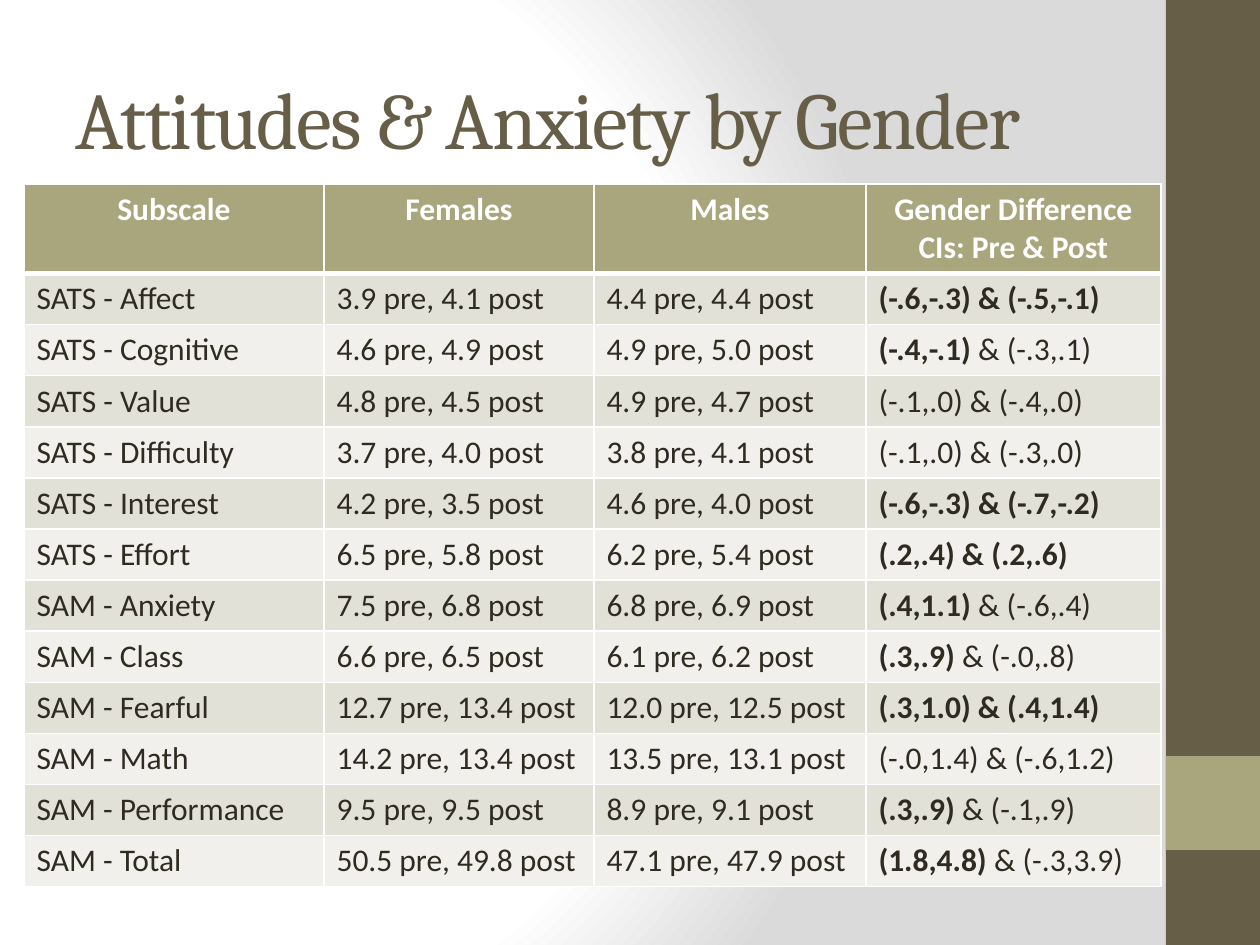
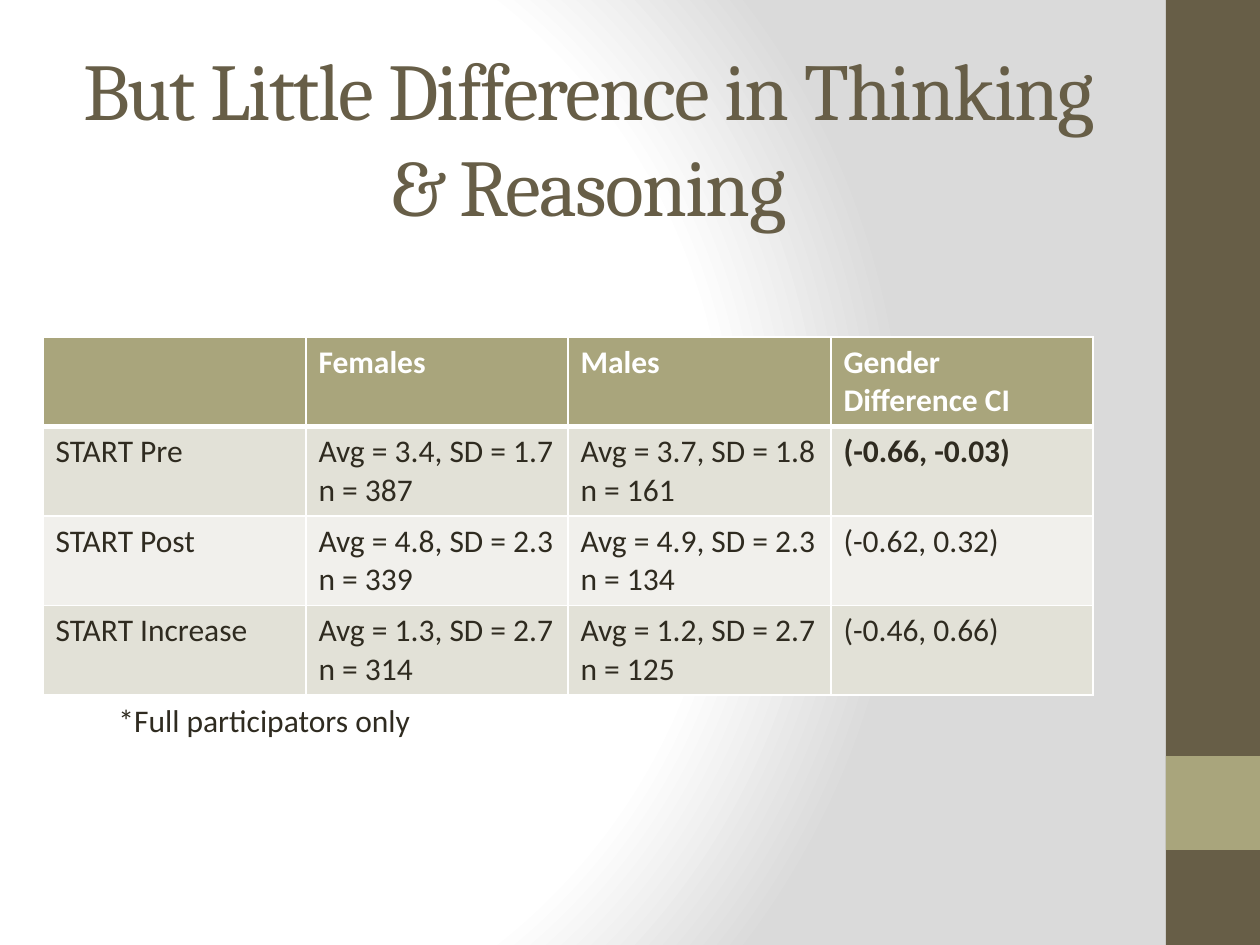
from dataclasses import dataclass

from lxml import etree
from pptx import Presentation
from pptx.dml.color import RGBColor as RGB
from pptx.enum.shapes import MSO_SHAPE
from pptx.enum.text import MSO_ANCHOR, MSO_AUTO_SIZE, PP_ALIGN
from pptx.oxml import parse_xml
from pptx.oxml.ns import nsdecls, qn
from pptx.util import Emu, Pt


@dataclass(frozen=True)
class Theme:
    brown: str = "675E47"
    olive: str = "A9A57C"
    ink: str = "2F2B20"
    white: str = "FFFFFF"
    grey: str = "DADADA"
    row_fills: tuple = ("E2E1D7", "F1F0EC")
    title_font: str = "Cambria"
    body_font: str = "Calibri"
    title_size: int = 46
    body_size: int = 18


T = Theme()
LEFT, CENTER = PP_ALIGN.LEFT, PP_ALIGN.CENTER


def px(*lengths):
    """Turn px (126 to the inch) into a list of EMU lengths."""
    return [Emu(round(n * 914400 / 126)) for n in lengths]


def set_font(font, name, size, color):
    font.name, font.size = name, Pt(size)
    font.color.rgb = RGB.from_string(color)


# Text between asterisks is bold; a line break starts a new paragraph.
SLIDES = [
    dict(
        title="Attitudes & Anxiety by Gender",
        title_box=(63, 38, 1050, 158), title_align=LEFT,
        table_at=(24, 184), columns=(300, 270, 272, 295),
        header_height=88, row_height=51, header_align=CENTER,
        rows=[
            ("Subscale", "Females", "Males", "Gender Difference\nCIs: Pre & Post"),
            ("SATS - Affect", "3.9 pre, 4.1 post", "4.4 pre, 4.4 post", "*(-.6,-.3) & (-.5,-.1)*"),
            ("SATS - Cognitive", "4.6 pre, 4.9 post", "4.9 pre, 5.0 post", "*(-.4,-.1) *& (-.3,.1)"),
            ("SATS - Value", "4.8 pre, 4.5 post", "4.9 pre, 4.7 post", "(-.1,.0) & (-.4,.0)"),
            ("SATS - Difficulty", "3.7 pre, 4.0 post", "3.8 pre, 4.1 post", "(-.1,.0) & (-.3,.0)"),
            ("SATS - Interest", "4.2 pre, 3.5 post", "4.6 pre, 4.0 post", "*(-.6,-.3) & (-.7,-.2)*"),
            ("SATS - Effort", "6.5 pre, 5.8 post", "6.2 pre, 5.4 post", "*(.2,.4) & (.2,.6)*"),
            ("SAM - Anxiety", "7.5 pre, 6.8 post", "6.8 pre, 6.9 post", "*(.4,1.1) *& (-.6,.4)"),
            ("SAM - Class", "6.6 pre, 6.5 post", "6.1 pre, 6.2 post", "*(.3,.9) *& (-.0,.8)"),
            ("SAM - Fearful", "12.7 pre, 13.4 post", "12.0 pre, 12.5 post", "*(.3,1.0) & (.4,1.4)*"),
            ("SAM - Math", "14.2 pre, 13.4 post", "13.5 pre, 13.1 post", "(-.0,1.4) & (-.6,1.2)"),
            ("SAM - Performance", "9.5 pre, 9.5 post", "8.9 pre, 9.1 post", "*(.3,.9) *& (-.1,.9)"),
            ("SAM - Total", "50.5 pre, 49.8 post", "47.1 pre, 47.9 post", "*(1.8,4.8) *& (-.3,3.9)"),
        ],
    ),
    dict(
        title="But Little Difference in Thinking & Reasoning",
        title_box=(63, 38, 1050, 197), title_align=CENTER,
        table_at=(43, 337), columns=(263, 262) * 2,
        header_height=88, row_height=88, header_align=LEFT,
        rows=[
            ("", "Females", "Males", "Gender Difference CI"),
            ("START Pre", "Avg = 3.4, SD = 1.7\nn = 387", "Avg = 3.7, SD = 1.8\nn = 161", "*(-0.66, -0.03)*"),
            ("START Post", "Avg = 4.8, SD = 2.3\nn = 339", "Avg = 4.9, SD = 2.3\nn = 134", "(-0.62, 0.32)"),
            ("START Increase", "Avg = 1.3, SD = 2.7\nn = 314", "Avg = 1.2, SD = 2.7\nn = 125", "(-0.46, 0.66)"),
        ],
        note="*Full participators only", note_box=(106, 695, 321, 50),
    ),
]

prs = Presentation()
prs.slide_width, prs.slide_height = px(1260, 945)
master = prs.slide_master

# Shared background: white that fades to grey on the right
master.background.fill.solid()
bg = master.element.find(".//" + qn("p:bgPr"))
bg.replace(bg[0], parse_xml(
    f'<a:gradFill {nsdecls("a")} rotWithShape="1"><a:gsLst>'
    f'<a:gs pos="0"><a:srgbClr val="{T.white}"/></a:gs>'
    f'<a:gs pos="75000"><a:srgbClr val="{T.white}"/></a:gs>'
    f'<a:gs pos="100000"><a:srgbClr val="{T.grey}"/></a:gs></a:gsLst>'
    '<a:path path="circle"><a:fillToRect l="20000" t="50000" r="100000" b="50000"/>'
    '</a:path></a:gradFill>'))

for number, content in enumerate(SLIDES):
    s = prs.slides.add_slide(prs.slide_layouts[5])

    # Side bands are made once and moved to the master
    if number == 0:
        for i, (top, height, color) in enumerate([(0, 945, T.brown), (756, 94, T.olive)]):
            band = s.shapes.add_shape(MSO_SHAPE.RECTANGLE, *px(1166, top, 94, height))
            band.shadow.inherit = False
            band.fill.solid()
            band.fill.fore_color.rgb = RGB.from_string(color)
            band.line.fill.background()
            band.element.nvSpPr.cNvPr.set("id", str(20 + i))
            master.shapes.element.insert(2 + i, band.element)

    title = s.shapes.title
    title.left, title.top, title.width, title.height = px(*content["title_box"])
    tf = title.text_frame
    tf.text = content["title"]
    tf.word_wrap = True
    tf.auto_size = MSO_AUTO_SIZE.NONE
    tf.vertical_anchor = MSO_ANCHOR.MIDDLE
    p = tf.paragraphs[0]
    p.alignment = content["title_align"]
    set_font(p.font, T.title_font, T.title_size, T.brown)
    p.runs[0].font.bold = False
    p.runs[0].font._element.set("spc", "-100")

    rows, columns = content["rows"], content["columns"]
    heights = [content["header_height"]] + [content["row_height"]] * (len(rows) - 1)
    table = s.shapes.add_table(len(rows), len(columns), *px(
        *content["table_at"], sum(columns), sum(heights))).table
    for column, width in zip(table.columns, px(*columns)):
        column.width = width
    for y, (row, height) in enumerate(zip(rows, px(*heights))):
        table.rows[y].height = height
        is_header = y == 0
        fill = T.olive if is_header else T.row_fills[(y - 1) % 2]
        for x, text in enumerate(row):
            cell = table.cell(y, x)
            cell.fill.solid()
            cell.fill.fore_color.rgb = RGB.from_string(fill)
            tc_pr = cell._tc.get_or_add_tcPr()
            for i, side in enumerate("LRTB"):
                is_rule = (y, side) in ((0, "B"), (1, "T"))
                ln = etree.Element(qn(f"a:ln{side}"), w=str(Pt(3 if is_rule else 1)))
                solid = etree.SubElement(ln, qn("a:solidFill"))
                etree.SubElement(solid, qn("a:srgbClr"), val=T.white)
                tc_pr.insert(i, ln)
            tf = cell.text_frame
            for i, line in enumerate(text.split("\n")):
                p = tf.add_paragraph() if i else tf.paragraphs[0]
                p.alignment = content["header_align"] if is_header else LEFT
                set_font(p.font, T.body_font, T.body_size, T.white if is_header else T.ink)
                for k, part in enumerate(line.split("*")):
                    if part:
                        r = p.add_run()
                        r.text = part
                        r.font.bold = is_header or k % 2 == 1

    if "note" in content:
        tf = s.shapes.add_textbox(*px(*content["note_box"])).text_frame
        tf.word_wrap = False
        tf.auto_size = MSO_AUTO_SIZE.SHAPE_TO_FIT_TEXT
        tf.text = content["note"]
        set_font(tf.paragraphs[0].font, T.body_font, T.body_size, T.ink)

prs.save("out.pptx")
